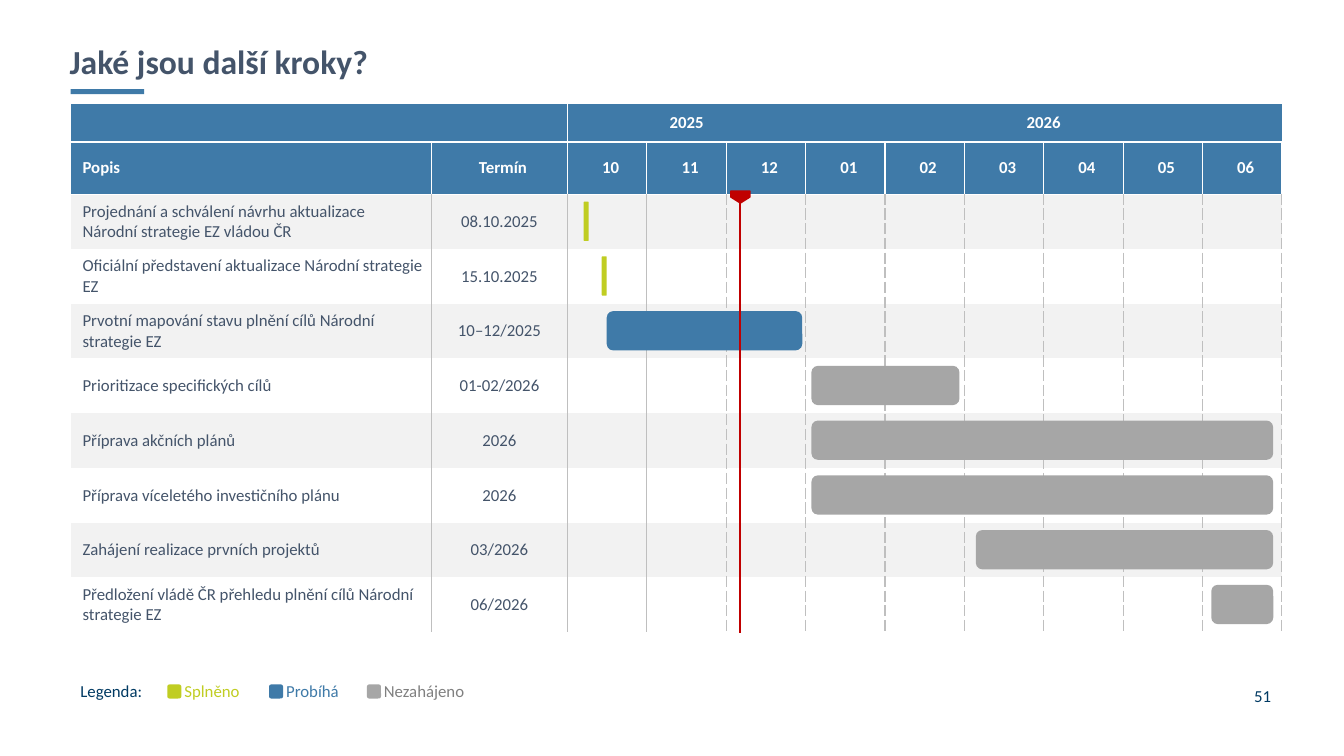
"""Build the slide with the schedule of next steps as a Gantt table."""
from lxml import etree
from pptx import Presentation
from pptx.dml.color import RGBColor
from pptx.enum.shapes import MSO_CONNECTOR, MSO_SHAPE
from pptx.enum.text import MSO_ANCHOR, MSO_AUTO_SIZE, PP_ALIGN
from pptx.oxml.ns import qn
from pptx.util import Pt

LEFT, CENTER, RIGHT = PP_ALIGN.LEFT, PP_ALIGN.CENTER, PP_ALIGN.RIGHT
TOP, MIDDLE = MSO_ANCHOR.TOP, MSO_ANCHOR.MIDDLE
NO_AUTOFIT = MSO_AUTO_SIZE.NONE
RECTANGLE, ROUNDED = MSO_SHAPE.RECTANGLE, MSO_SHAPE.ROUNDED_RECTANGLE
PENTAGON, STRAIGHT = MSO_SHAPE.PENTAGON, MSO_CONNECTOR.STRAIGHT

BLUE = RGBColor(0x3F, 0x7A, 0xA8)
NAVY = RGBColor(0x00, 0x3A, 0x63)
SLATE = RGBColor(0x44, 0x54, 0x6A)
LIME = RGBColor(0xC0, 0xCD, 0x22)
GRAY = RGBColor(0xA6, 0xA6, 0xA6)
DARK_GRAY = RGBColor(0x80, 0x80, 0x80)
GRID = RGBColor(0xBF, 0xBF, 0xBF)
STRIPE = RGBColor(0xF2, 0xF2, 0xF2)
WHITE = RGBColor(0xFF, 0xFF, 0xFF)
RED = RGBColor(0xC0, 0x00, 0x00)

TABLE_LEFT, TABLE_TOP = 50.4, 74.2
COLUMN_WIDTHS = [257.8, 97.2] + [56.7] * 9
ROW_HEIGHTS = [27.2, 37.4] + [39.1] * 8
BAR_TOP, BAR_HEIGHT = 144, 28.1

YEARS = ["", "", "2025", "", "", "2026", "", "", "", "", ""]
HEADINGS = ["Popis", "Termín", "10", "11", "12", "01", "02", "03", "04", "05", "06"]
STEPS = [
    ("Projednání a schválení návrhu aktualizace \nNárodní strategie EZ vládou ČR",
     "08.10.2025", 416.9, 3.6, LIME),
    ("Oficiální představení aktualizace Národní strategie EZ",
     "15.10.2025", 429.8, 3.6, LIME),
    ("Prvotní mapování stavu plnění cílů Národní strategie EZ",
     "10–12/2025", 433.4, 139.7, BLUE),
    ("Prioritizace specifických cílů", "01-02/2026", 579.6, 105.8, GRAY),
    ("Příprava akčních plánů", "2026", 579.6, 329.8, GRAY),
    ("Příprava víceletého investičního plánu", "2026", 579.6, 329.8, GRAY),
    ("Zahájení realizace prvních projektů", "03/2026", 697, 212.4, GRAY),
    ("Předložení vládě ČR přehledu plnění cílů Národní strategie EZ",
     "06/2026", 865.2, 44.3, GRAY),
]
TEXT_BOXES = [
    ("51", 738, 482.4, 177.1, 28.8, NAVY, RIGHT, MIDDLE, True),
    ("Legenda:", 50.4, 482.4, 69.1, 21.6, NAVY, LEFT, TOP, True),
    ("Splněno", 124.6, 482.4, 58.3, 21.6, LIME, LEFT, TOP, False),
    ("Probíhá", 197.3, 482.4, 56.2, 21.6, BLUE, LEFT, TOP, False),
    ("Nezahájeno", 267.1, 482.4, 78.5, 21.6, DARK_GRAY, LEFT, TOP, False),
]
SWATCHES = [(119.5, LIME), (192.2, BLUE), (262.1, GRAY)]


def write(paragraph, text, color, size=12, bold=False, align=LEFT):
    paragraph.alignment = align
    for index, line in enumerate(text.split("\n")):
        if index:
            paragraph.add_line_break()
        run = paragraph.add_run()
        run.text = line
        run.font.name = "Calibri"
        run.font.size = Pt(size)
        run.font.bold = bold
        run.font.color.rgb = color


def add_block(kind, left, top, width, height, color):
    block = slide.shapes.add_shape(kind, Pt(left), Pt(top), Pt(width), Pt(height))
    block.shadow.inherit = False
    block.fill.solid()
    block.fill.fore_color.rgb = color
    block.line.fill.background()
    return block


prs = Presentation()
prs.slide_width, prs.slide_height = Pt(960), Pt(540)
slide = prs.slides.add_slide(prs.slide_layouts[5])

title = slide.shapes.title
title.left, title.top, title.width, title.height = Pt(42.5), Pt(28.8), Pt(873.4), Pt(37.4)
title.text_frame.vertical_anchor = TOP
title.text_frame.auto_size = NO_AUTOFIT
title.text_frame.paragraphs[0].line_spacing = 0.9
write(title.text_frame.paragraphs[0], "Jaké jsou další kroky?", SLATE, 24, True)
add_block(RECTANGLE, 50.4, 63.6, 52.6, 3.6, BLUE)

contents = [YEARS, HEADINGS]
contents += [[description, term] + [""] * 9 for description, term, *_ in STEPS]
schedule = slide.shapes.add_table(
    len(ROW_HEIGHTS), len(COLUMN_WIDTHS), Pt(TABLE_LEFT), Pt(TABLE_TOP),
    Pt(sum(COLUMN_WIDTHS)), Pt(sum(ROW_HEIGHTS))).table
schedule.first_row = schedule.horz_banding = False
for column, width in zip(schedule.columns, COLUMN_WIDTHS):
    column.width = Pt(width)
for row, height in zip(schedule.rows, ROW_HEIGHTS):
    row.height = Pt(height)
for first, last in ((0, 1), (2, 4), (5, 10)):
    schedule.cell(0, first).merge(schedule.cell(0, last))

for r, texts in enumerate(contents):
    for c, text in enumerate(texts):
        cell = schedule.cell(r, c)
        cell.vertical_anchor = MIDDLE
        cell.margin_top = cell.margin_bottom = 0
        cell.margin_left = Pt(8.6 if r == 1 or c == 0 else 3.6)
        cell.margin_right = Pt(3.6)
        if text:
            write(cell.text_frame.paragraphs[0], text, WHITE if r < 2 else SLATE,
                  bold=r < 2, align=LEFT if c == 0 else CENTER)

        borders = []
        for side, edge in (("lnL", c), ("lnR", c + 1)):
            if r == 0:
                color = WHITE if edge in (1, 2) else None
            elif r == 1:
                color = WHITE
            else:
                color = GRID if edge else None
            borders.append((side, color, "sysDash" if r > 1 and edge > 3 else "solid"))
        for side, edge in (("lnT", r), ("lnB", r + 1)):
            borders.append((side, WHITE if edge in (1, 2) else None, "solid"))
        properties = cell._tc.get_or_add_tcPr()
        for side, color, dash in borders:
            border = etree.SubElement(properties, qn("a:" + side), w=str(Pt(1)))
            if color is None:
                etree.SubElement(border, qn("a:noFill"))
            else:
                fill = etree.SubElement(border, qn("a:solidFill"))
                etree.SubElement(fill, qn("a:srgbClr"), val=str(color))
                etree.SubElement(border, qn("a:prstDash"), val=dash)
        cell.fill.solid()
        cell.fill.fore_color.rgb = BLUE if r < 2 else (WHITE if r % 2 else STRIPE)

for index, (_, _, left, width, color) in enumerate(STEPS):
    add_block(ROUNDED, left, BAR_TOP + index * ROW_HEIGHTS[-1], width, BAR_HEIGHT, color)

today_flag = add_block(PENTAGON, 524.5, 133.9, 8.6, 13.7, RED)
today_flag.rotation = 90
today_flag.line.color.rgb = RED
today_flag.line.width = Pt(1)
today_line = slide.shapes.add_connector(STRAIGHT, Pt(528.6), Pt(138.2), Pt(528.6), Pt(452.2))
today_line.line.color.rgb = RED
today_line.line.width = Pt(1.5)
etree.SubElement(today_line._element.spPr, qn("a:effectLst"))

for left, color in SWATCHES:
    add_block(ROUNDED, left, 488.9, 10.1, 10.1, color)
for text, left, top, width, height, color, align, anchor, wrap in TEXT_BOXES:
    label = slide.shapes.add_textbox(Pt(left), Pt(top), Pt(width), Pt(height)).text_frame
    label.word_wrap = wrap
    label.vertical_anchor = anchor
    write(label.paragraphs[0], text, color, align=align)

prs.save("out.pptx")
